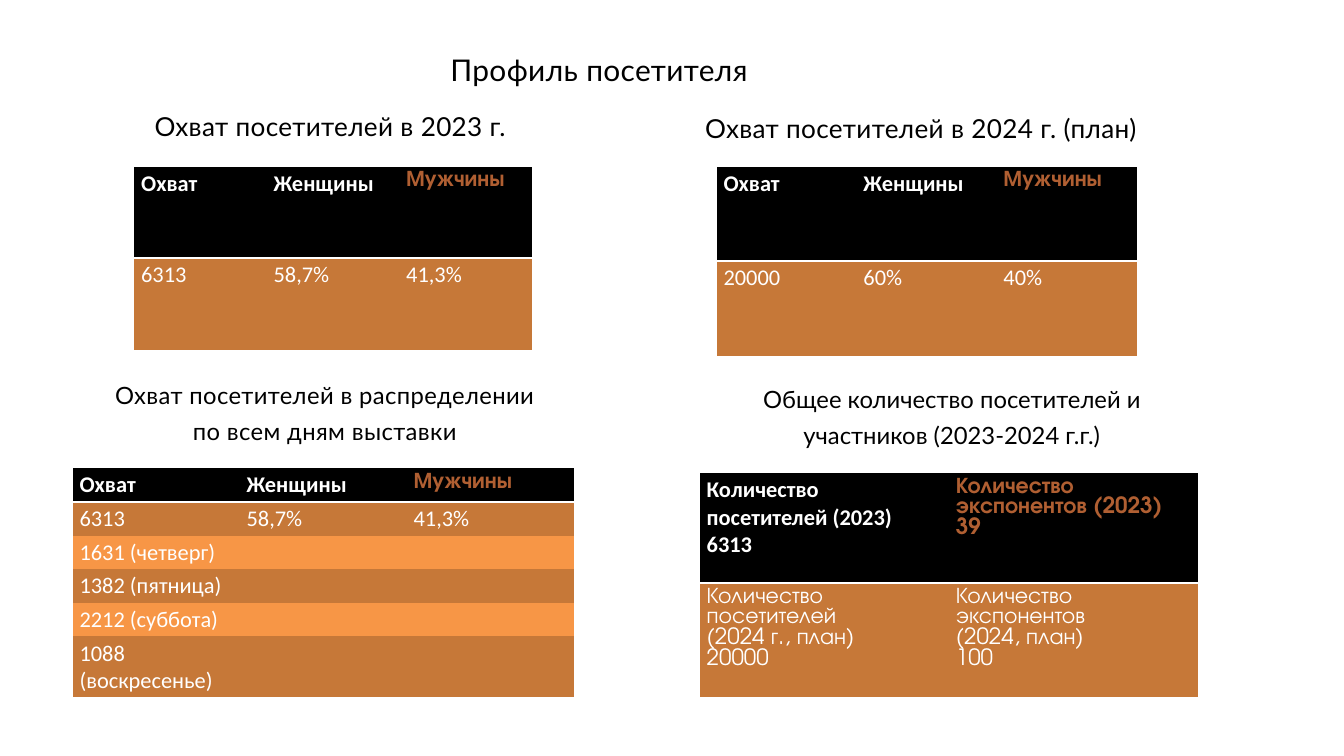
from lxml.etree import SubElement
from pptx import Presentation
from pptx.dml.color import RGBColor
from pptx.enum.text import MSO_AUTO_SIZE, PP_ALIGN
from pptx.oxml.ns import qn
from pptx.util import Emu, Pt

PX = 9525
NO_GRID_STYLE = "{2D5ABB26-0587-4C30-8999-92F81FD0307C}"


def px(n):
    return Emu(round(n * PX))


def color(hex_string):
    return RGBColor.from_string(hex_string)


def apply(obj, values):
    for name, value in values.items():
        setattr(obj, name, value)


class Deck:
    heading_font, table_font, accent_font = "Lato", "Calibri", "TeX Gyre Adventor"
    black, white, accent = "000000", "FFFFFF", "B05F32"
    stripes = ("C67838", "F79646")
    cell_size = 24

    def __init__(self, width, height):
        self.prs = Presentation()
        apply(self.prs, {"slide_width": px(width), "slide_height": px(height)})
        self.s = self.prs.slides.add_slide(self.prs.slide_layouts[6])

    def run(self, p, text, size, font, hex_color, bold=False):
        r = p.add_run()
        r.text = text
        apply(r.font, {"size": Pt(size), "name": font, "bold": bold})
        r.font.color.rgb = color(hex_color)
        return r

    def heading(self, box, text, size, spacing=40):
        """Centred heading; spacing is in hundredths of a point."""
        tf = self.s.shapes.add_textbox(*map(px, box)).text_frame
        apply(tf, {"word_wrap": True, "auto_size": MSO_AUTO_SIZE.SHAPE_TO_FIT_TEXT,
                   "margin_left": 0, "margin_right": 0,
                   "margin_top": px(1), "margin_bottom": 0})
        for i, line in enumerate(text.split("\n")):
            p = tf.add_paragraph() if i else tf.paragraphs[0]
            apply(p, {"alignment": PP_ALIGN.CENTER, "line_spacing": 1.25,
                      "space_before": Pt(0.9)})
            r = self.run(p, line, size, self.heading_font, self.black)
            r.font._element.set("spc", str(spacing))

    def fill_cell(self, cell, text, fill, font, hex_color, bold):
        cell.fill.solid()
        cell.fill.fore_color.rgb = color(fill)
        if not text:
            return
        tf = cell.text_frame
        for i, line in enumerate(text.split("\n")):
            p = tf.add_paragraph() if i else tf.paragraphs[0]
            self.run(p, line, self.cell_size, font, hex_color, bold)

    def underline_cell(self, cell):
        tcPr = cell._tc.get_or_add_tcPr()
        ln = tcPr.makeelement(qn("a:lnB"), {"w": str(Pt(2))})
        tcPr.insert(0, ln)
        SubElement(SubElement(ln, qn("a:solidFill")), qn("a:srgbClr"), val=self.white)

    def table(self, left, top, width, heights, rows, body_font=table_font):
        """Black header with an accented last column above striped rows."""
        n = len(rows[0])
        frame = self.s.shapes.add_table(len(rows), n, px(left), px(top),
                                        px(width), px(sum(heights)))
        tbl = frame.table
        apply(tbl, {"first_row": False, "horz_banding": False})
        tbl._tbl.tblPr.find(qn("a:tableStyleId")).text = NO_GRID_STYLE
        for col in tbl.columns:
            col.width = px(width / n)
        for i, (height, row) in enumerate(zip(heights, rows)):
            tbl.rows[i].height = px(height)
            for j in range(n):
                cell = tbl.cell(i, j)
                text = row[j] if j < len(row) else ""
                if i:
                    look = self.stripes[(i - 1) % 2], body_font, self.white, False
                elif j == n - 1:
                    look = self.black, self.accent_font, self.accent, True
                else:
                    look = self.black, self.table_font, self.white, True
                self.fill_cell(cell, text, *look)
                if i == 0:
                    self.underline_cell(cell)


def main():
    deck = Deck(1920, 1080)
    header = ["Охват", "Женщины", "Мужчины"]
    reach_2023 = ["6313", "58,7%", "41,3%"]
    days = ["1631 (четверг)", "1382 (пятница)", "2212 (суббота)", "1088 (воскресенье)"]
    totals = [
        ["Количество посетителей (2023)\n6313", "Количество экспонентов (2023)\n39"],
        ["Количество посетителей\n(2024 г., план)\n20000",
         "Количество экспонентов\n(2024, план)\n100"],
    ]

    deck.heading((520, 60, 672, 59), "Профиль посетителя", 32)

    deck.heading((136, 146, 672, 58), "Охват посетителей в 2023 г.", 28)
    deck.table(192, 238, 568, [131, 131], [header, reach_2023])

    deck.heading((864, 148, 904, 52), "Охват посетителей в 2024 г. (план)", 28)
    deck.table(1024, 238, 600, [135, 135], [header, ["20000", "60%", "40%"]])

    deck.heading((112, 532, 704, 106),
                 "Охват посетителей в распределении\nпо всем дням выставки", 25.5)
    deck.table(104, 669, 716, [48, 45, 45, 45, 45, 81],
               [header, reach_2023] + [[day] for day in days])

    deck.heading((1056, 539, 608, 99),
                 "Общее количество посетителей и участников (2023-2024 г.г.)", 25.5, 0)
    deck.table(1000, 676, 712, [157, 163], totals, deck.accent_font)

    deck.prs.save("out.pptx")


if __name__ == "__main__":
    main()
